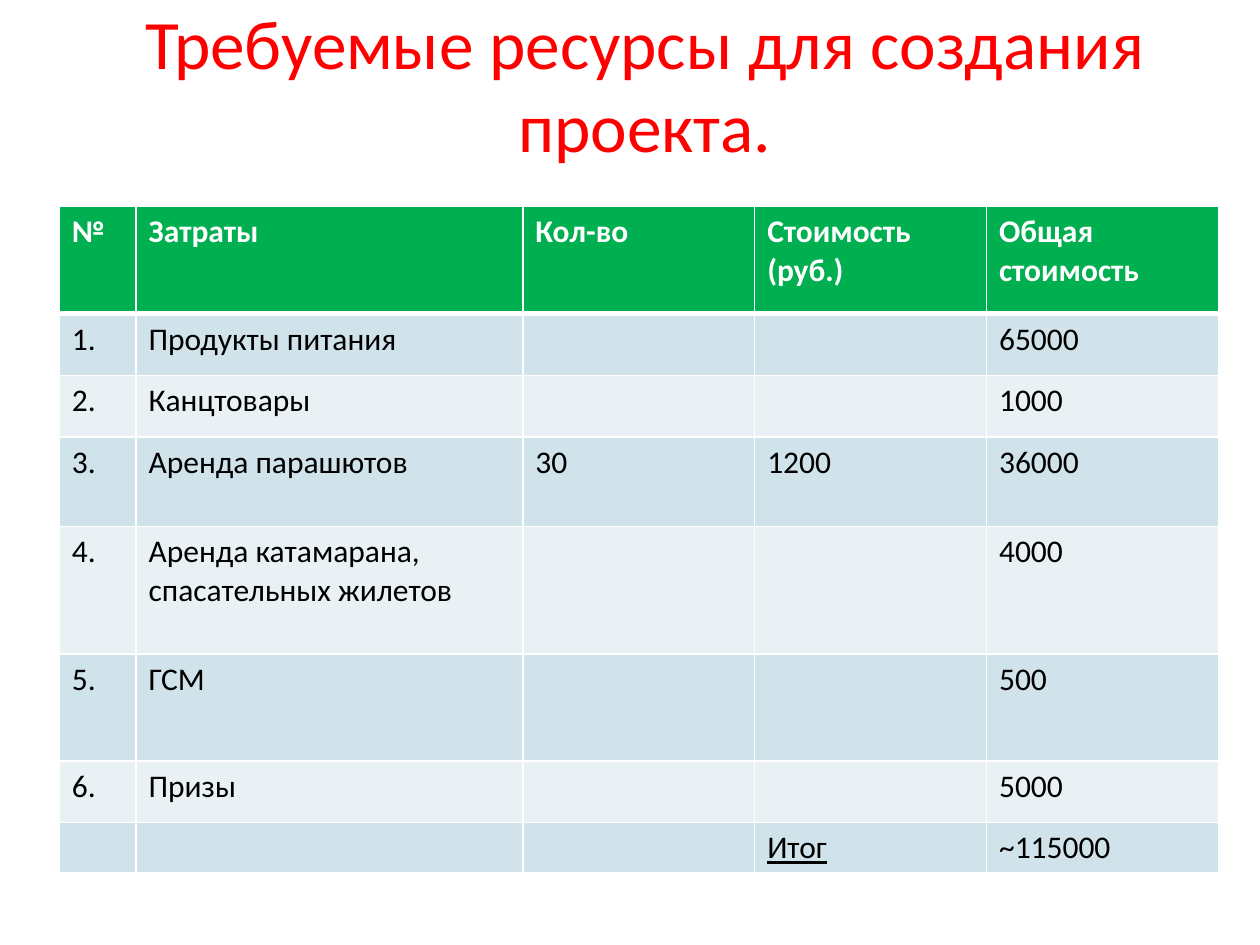
from dataclasses import dataclass

import pptx
import pptx.dml.color
import pptx.enum.text
import pptx.util
from lxml import etree
from pptx.oxml.ns import qn

Inches = pptx.util.Inches
Pt = pptx.util.Pt


@dataclass(frozen=True)
class Theme:
    font: str = "Calibri"
    title_size: float = 39.6
    table_size: float = 18
    title: str = "FF0000"
    header: str = "00B050"
    bands: tuple[str, str] = ("D0E3EA", "E9F1F5")
    light: str = "FFFFFF"
    dark: str = "000000"
    thin: float = 1
    thick: float = 3


@dataclass(frozen=True)
class Row:
    height: float
    texts: tuple[str, str, str, str, str]


THEME = Theme()
COLUMN_WIDTHS = (0.61, 3.07, 1.84, 1.84, 1.84)
TOTAL_LABEL = "Итог"
ROWS = (
    Row(0.85, ("№", "Затраты", "Кол-во", "Стоимость (руб.)", "Общая стоимость")),
    Row(0.49, ("1.", "Продукты питания", "", "", "65000")),
    Row(0.49, ("2.", "Канцтовары", "", "", "1000")),
    Row(0.71, ("3.", "Аренда парашютов", "30", "1200", "36000")),
    Row(1.01, ("4.", "Аренда катамарана, спасательных жилетов", "", "", "4000")),
    Row(0.85, ("5.", "ГСМ", "", "", "500")),
    Row(0.49, ("6.", "Призы", "", "", "5000")),
    Row(0.4, ("", "", "", TOTAL_LABEL, "~115000")),
)


def rgb(color: str) -> pptx.dml.color.RGBColor:
    return pptx.dml.color.RGBColor.from_string(color)


def add_run(p, text: str, size: float, color: str, bold: bool = False):
    r = p.add_run()
    r.text = text
    r.font.name = THEME.font
    r.font.size = Pt(size)
    r.font.bold = bold
    r.font.color.rgb = rgb(color)
    return r


def set_borders(cell, top: float, bottom: float) -> None:
    tc_pr = cell._tc.get_or_add_tcPr()
    sides = (("lnL", THEME.thin), ("lnR", THEME.thin), ("lnT", top), ("lnB", bottom))
    for i, (side, width) in enumerate(sides):
        line = etree.Element(qn(f"a:{side}"), w=str(int(Pt(width))))
        fill = etree.SubElement(line, qn("a:solidFill"))
        etree.SubElement(fill, qn("a:srgbClr"), val=THEME.light)
        tc_pr.insert(i, line)


def add_title(s, text: str) -> None:
    tf = s.shapes.add_textbox(Inches(0.62), 0, Inches(9), Inches(1.25)).text_frame
    tf.word_wrap = True
    tf.margin_top = tf.margin_bottom = 0
    p = tf.paragraphs[0]
    p.alignment = pptx.enum.text.PP_ALIGN.CENTER
    add_run(p, text, THEME.title_size, THEME.title)


def fill_cell(cell, text: str, row: int) -> None:
    header = row == 0
    cell.fill.solid()
    cell.fill.fore_color.rgb = rgb(THEME.header if header else THEME.bands[(row - 1) % 2])
    set_borders(cell, THEME.thick if row == 1 else THEME.thin,
                THEME.thick if header else THEME.thin)
    if text:
        r = add_run(cell.text_frame.paragraphs[0], text, THEME.table_size,
                    THEME.light if header else THEME.dark, header)
        if text == TOTAL_LABEL:
            r.font.underline = True


def add_cost_table(s, rows: tuple[Row, ...]) -> None:
    table = s.shapes.add_table(
        len(rows), len(COLUMN_WIDTHS), Inches(0.47), Inches(1.64),
        Inches(sum(COLUMN_WIDTHS)), Inches(sum(row.height for row in rows))).table
    for column, width in zip(table.columns, COLUMN_WIDTHS):
        column.width = Inches(width)
    for i, row in enumerate(rows):
        table.rows[i].height = Inches(row.height)
        for j, text in enumerate(row.texts):
            fill_cell(table.cell(i, j), text, i)


def main() -> None:
    prs = pptx.Presentation()
    prs.slide_width, prs.slide_height = Inches(10), Inches(7.5)
    s = prs.slides.add_slide(prs.slide_layouts[6])

    # Title
    add_title(s, "Требуемые ресурсы для создания проекта.")

    # Project costs
    add_cost_table(s, ROWS)

    prs.save("out.pptx")


if __name__ == "__main__":
    main()
